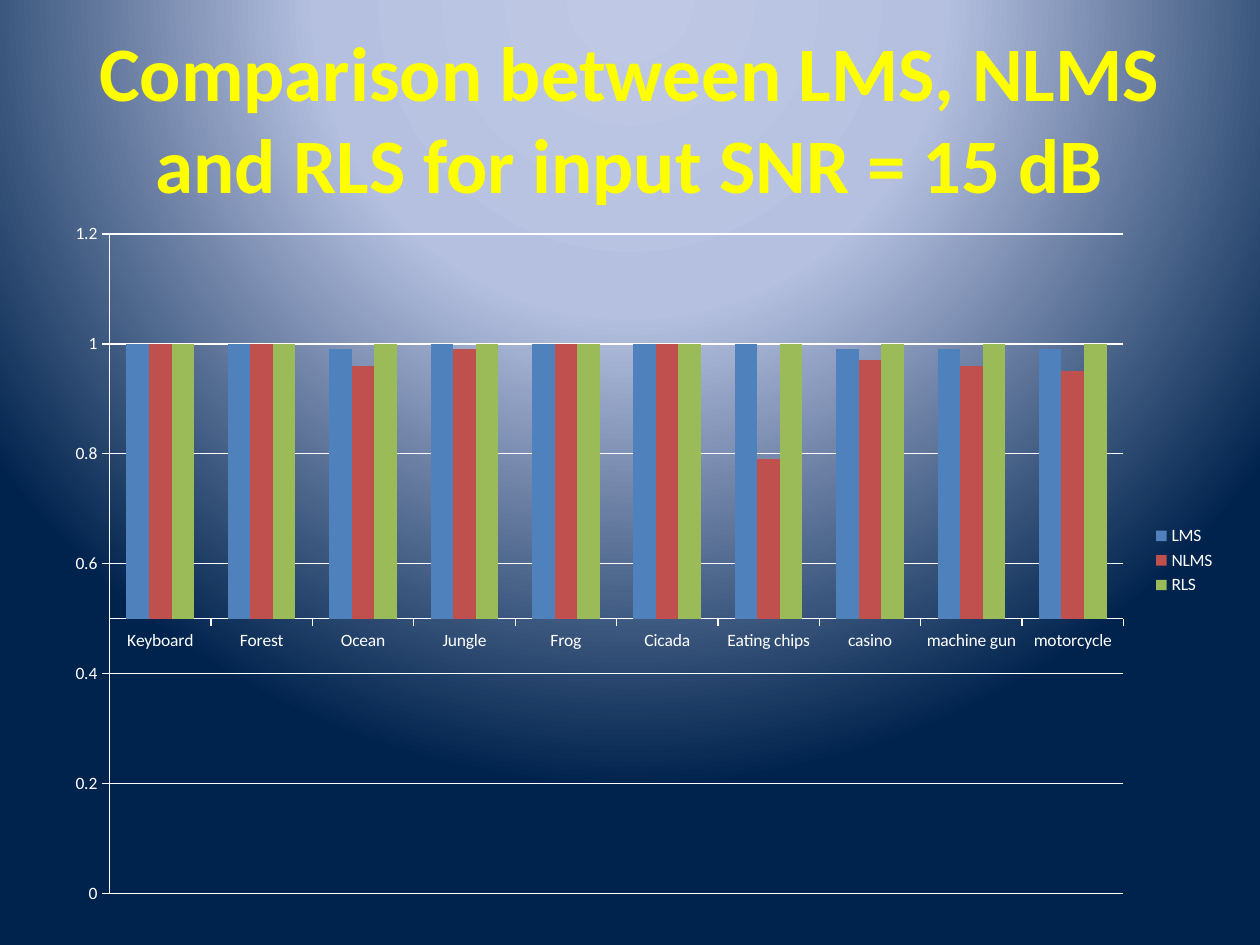
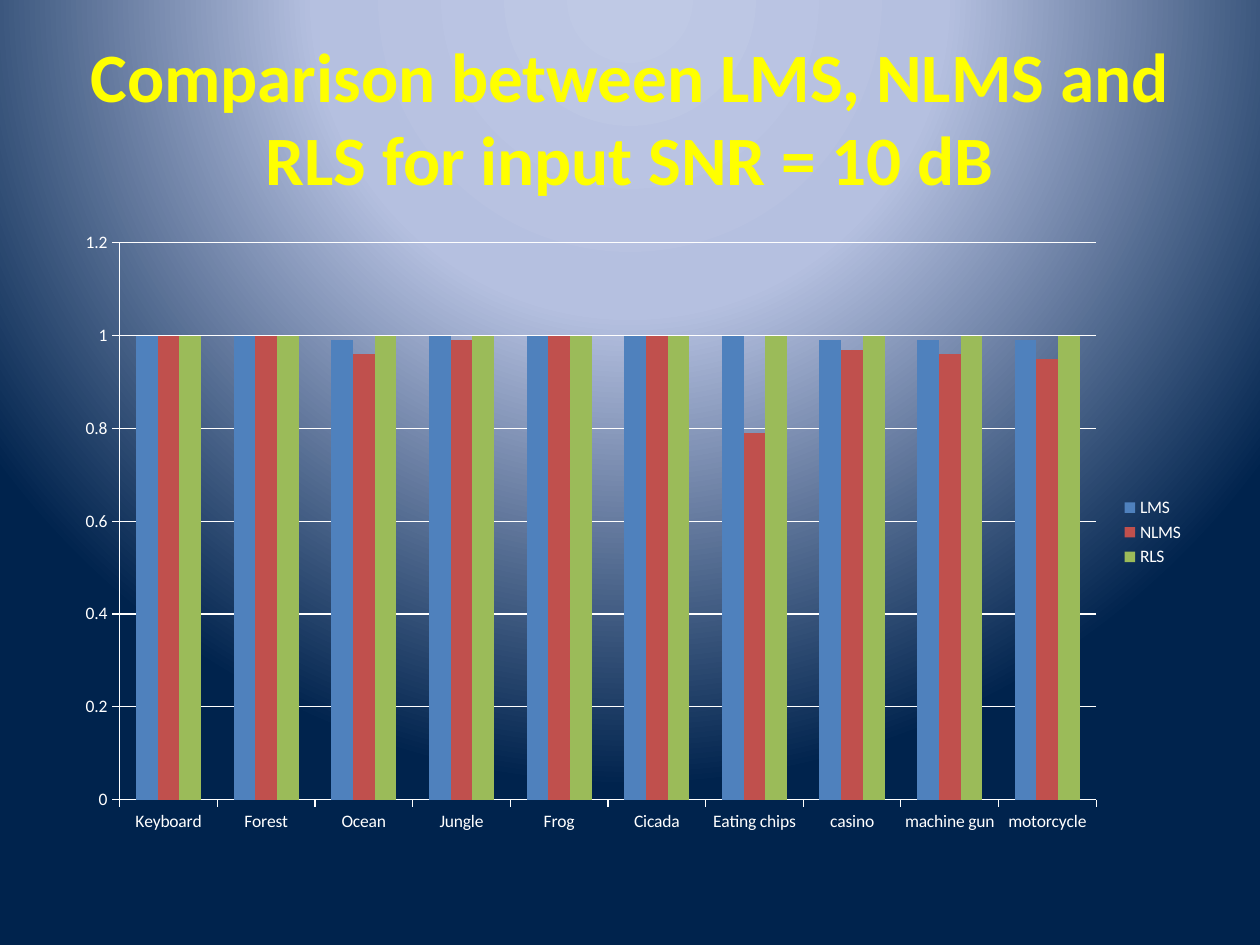
import pptx
import pptx.chart.data
import pptx.dml.color
import pptx.enum.chart
import pptx.enum.text
import pptx.oxml
import pptx.oxml.ns
import pptx.util
from pptx.util import Inches

FONT = "Calibri"
WHITE = "FFFFFF"
TITLE_YELLOW = "FFFF00"
GLOW_STOPS = [(0, "BFC9E5"), (40, "B5C0E0"), (100, "00234D")]

SOUNDS = ["Keyboard", "Forest", "Ocean", "Jungle", "Frog", "Cicada",
          "Eating chips", "casino", "machine gun", "motorcycle"]
ALGORITHMS = [
    ("LMS", "4F81BD", [1, 1, 0.99, 1, 1, 1, 1, 0.99, 0.99, 0.99]),
    ("NLMS", "C0504D", [1, 1, 0.96, 0.99, 1, 1, 0.79, 0.97, 0.96, 0.95]),
    ("RLS", "9BBB59", [1] * len(SOUNDS)),
]


def rgb(hex_color):
    return pptx.dml.color.RGBColor.from_string(hex_color)


def set_glow_background(master):
    fill = master.background.fill
    fill.solid()
    solid = master.element.find(".//" + pptx.oxml.ns.qn("p:bgPr"))[0]
    stops = "".join(
        f'<a:gs pos="{position * 1000}"><a:srgbClr val="{color}"/></a:gs>'
        for position, color in GLOW_STOPS)
    glow = pptx.oxml.parse_xml(
        f'<a:gradFill {pptx.oxml.ns.nsdecls("a")} rotWithShape="1">'
        f'<a:gsLst>{stops}</a:gsLst><a:path path="circle">'
        '<a:fillToRect l="50000" t="-80000" r="50000" b="180000"/>'
        '</a:path></a:gradFill>')
    solid.getparent().replace(solid, glow)


def set_title(slide, wording, size):
    title = slide.shapes.title
    title.left, title.top = Inches(0.5), Inches(0.3)
    title.width, title.height = Inches(9), Inches(1.25)
    frame = title.text_frame
    frame.text = wording
    frame.word_wrap = True
    frame.auto_size = pptx.enum.text.MSO_AUTO_SIZE.NONE
    frame.vertical_anchor = pptx.enum.text.MSO_ANCHOR.MIDDLE
    paragraph = frame.paragraphs[0]
    paragraph.alignment = pptx.enum.text.PP_ALIGN.CENTER
    paragraph.font.name = FONT
    paragraph.font.size = pptx.util.Pt(size)
    paragraph.font.bold = True
    paragraph.font.color.rgb = rgb(TITLE_YELLOW)


def set_white_line(line):
    line.color.rgb = rgb(WHITE)
    line.width = pptx.util.Pt(0.75)


def format_axes(chart):
    outside = pptx.enum.chart.XL_TICK_MARK.OUTSIDE
    for axis in (chart.category_axis, chart.value_axis):
        set_white_line(axis.format.line)
        axis.major_tick_mark = outside
        axis.minor_tick_mark = pptx.enum.chart.XL_TICK_MARK.NONE
    scale = chart.value_axis
    scale.minimum_scale, scale.maximum_scale = 0, 1.2
    scale.major_unit = 0.2
    scale.tick_labels.number_format = "General"
    scale.tick_labels.number_format_is_linked = False
    scale.has_major_gridlines = True
    set_white_line(scale.major_gridlines.format.line)


def add_comparison_chart(slide, width, height):
    data = pptx.chart.data.CategoryChartData()
    data.categories = SOUNDS
    for name, _, values in ALGORITHMS:
        data.add_series(name, values)
    chart = slide.shapes.add_chart(
        pptx.enum.chart.XL_CHART_TYPE.COLUMN_CLUSTERED,
        Inches(0.5), Inches(1.75), Inches(width), Inches(height), data).chart
    chart.has_title = False
    chart.font.name = FONT
    chart.font.size = pptx.util.Pt(10)
    chart.font.color.rgb = rgb(WHITE)
    chart.has_legend = True
    chart.legend.position = pptx.enum.chart.XL_LEGEND_POSITION.RIGHT
    chart.legend.include_in_layout = False
    columns = chart.plots[0]
    columns.vary_by_categories = False
    columns.gap_width = 150
    for series, (_, color, _) in zip(columns.series, ALGORITHMS):
        series.format.fill.solid()
        series.format.fill.fore_color.rgb = rgb(color)
    format_axes(chart)
    return chart


def place_plot_area(chart, x, y, w, h):
    plot_area = chart.plots[0]._element.getparent()
    for old_layout in plot_area.findall(pptx.oxml.ns.qn("c:layout")):
        plot_area.remove(old_layout)
    sides = "".join(f'<c:{side} val="{share}"/>'
                    for side, share in zip("xywh", (x, y, w, h)))
    plot_area.insert(0, pptx.oxml.parse_xml(
        f'<c:layout {pptx.oxml.ns.nsdecls("c")}><c:manualLayout>'
        '<c:layoutTarget val="inner"/>'
        '<c:xMode val="edge"/><c:yMode val="edge"/>'
        f'{sides}</c:manualLayout></c:layout>'))


def add_comparison_slide(deck, snr, title_size, chart_width, chart_height):
    slide = deck.slides.add_slide(deck.slide_layouts[5])
    set_title(slide, "Comparison between LMS, NLMS and RLS "
                     f"for input SNR = {snr} dB", title_size)
    return add_comparison_chart(slide, chart_width, chart_height)


def main():
    deck = pptx.Presentation()
    deck.slide_width, deck.slide_height = Inches(10), Inches(7.5)
    set_glow_background(deck.slide_master)
    chart_15_db = add_comparison_slide(deck, 15, 44, 9.25, 5.42)
    chart_15_db.value_axis.crosses_at = 0.5
    place_plot_area(chart_15_db, 0.04, 0.02, 0.87, 0.97)
    add_comparison_slide(deck, 10, 39.6, 9, 4.95)
    deck.save("out.pptx")


if __name__ == "__main__":
    main()
